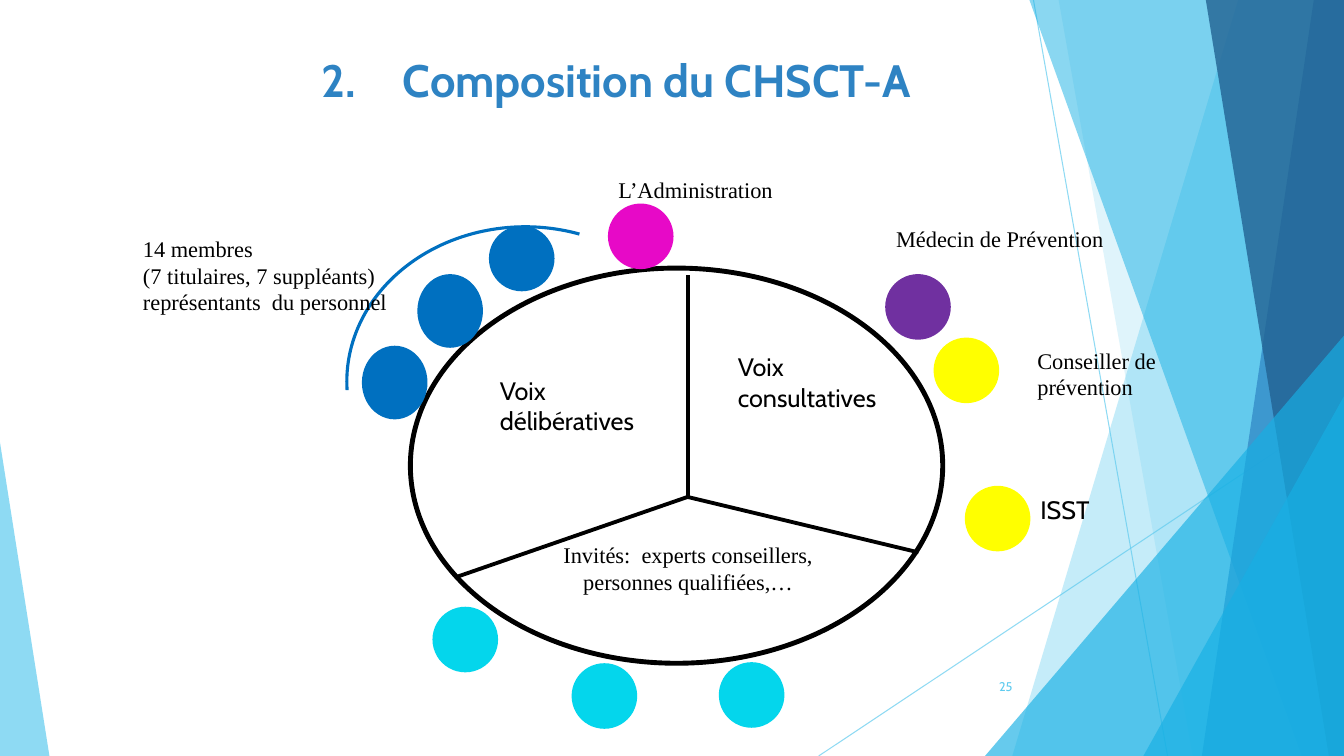
from lxml import etree
from pptx import Presentation
from pptx.dml.color import RGBColor
from pptx.enum.shapes import MSO_CONNECTOR, MSO_SHAPE
from pptx.enum.text import MSO_ANCHOR, PP_ALIGN
from pptx.oxml.ns import qn
from pptx.util import Inches, Pt

STRAIGHT = MSO_CONNECTOR.STRAIGHT
OVAL, ARC, TRIANGLE = MSO_SHAPE.OVAL, MSO_SHAPE.ARC, MSO_SHAPE.ISOSCELES_TRIANGLE
LEFT, CENTER, RIGHT = PP_ALIGN.LEFT, PP_ALIGN.CENTER, PP_ALIGN.RIGHT
TOP, MIDDLE = MSO_ANCHOR.TOP, MSO_ANCHOR.MIDDLE

BLACK = RGBColor(0x00, 0x00, 0x00)
WHITE = RGBColor(0xFF, 0xFF, 0xFF)
SKY = RGBColor(0x5F, 0xCB, 0xEF)
AZURE = RGBColor(0x17, 0xB0, 0xE4)
STEEL = RGBColor(0x2E, 0x83, 0xC3)
NAVY = RGBColor(0x22, 0x62, 0x92)
BLUE = RGBColor(0x00, 0x70, 0xC0)
YELLOW = RGBColor(0xFF, 0xFF, 0x00)
CYAN = RGBColor(0x04, 0xD6, 0xEC)
MAGENTA = RGBColor(0xE7, 0x09, 0xC7)
PURPLE = RGBColor(0x70, 0x30, 0xA0)

SANS, SERIF = "Cabin", "Times New Roman"
WIDTH, HEIGHT = 13.33, 7.5
SEAT = 0.63
HUB = (6.82, 4.93)

BACKDROP_LINES = [((10.25, 0), (11.58, HEIGHT)), ((WIDTH, 4.03), (8.12, HEIGHT))]
BACKDROP_BANDS = [
    (12.28, 10.04, SKY, 36),
    (10.5, 11.83, SKY, 20),
    (10.21, 12.91, AZURE, 50),
    (13.03, 11.92, STEEL, 70),
    (11.96, 13.18, NAVY, 80),
]
BACKDROP_TRIANGLES = [
    (9.77, 3.33, 3.56, 4.17, 1, AZURE, 66),
    (11.34, 3.93, 1.99, 3.57, 1, AZURE, 66),
    (0, 4.39, 0.49, 3.11, 0, SKY, 70),
]
SPOKE_ENDS = [(6.82, 2.73), (4.54, 5.72), (9.11, 5.48)]
SEATS = [
    (3.6, 3.44, 0.71, BLUE),
    (4.15, 2.73, 0.71, BLUE),
    (4.86, 2.25, SEAT, BLUE),
    (6.04, 2.03, SEAT, MAGENTA),
    (8.79, 2.73, SEAT, PURPLE),
    (9.27, 3.36, SEAT, YELLOW),
    (9.58, 4.83, SEAT, YELLOW),
    (4.3, 6.03, SEAT, CYAN),
    (5.68, 6.59, SEAT, CYAN),
    (7.14, 6.58, SEAT, CYAN),
]
LABELS = [
    ("Voix délibératives", 4.86, 3.67, 1.97, 0.71, SANS, 18, LEFT),
    ("Voix consultatives", 7.22, 3.44, 1.81, 0.71, SANS, 18, LEFT),
    ("ISST", 10.22, 4.86, 1.6, 0.4, SANS, 18, LEFT),
    ("Médecin de Prévention", 8.79, 2.18, 2.6, 0.37, SERIF, 16, LEFT),
    ("Conseiller de prévention", 10.19, 3.39, 1.42, 0.64, SERIF, 16, LEFT),
    ("Invités:  experts conseillers, personnes qualifiées,…",
     5.25, 5.32, 3.15, 0.64, SERIF, 16, CENTER),
    ("L’Administration", 5.56, 1.7, 2.68, 0.37, SERIF, 16, CENTER),
    ("14 membres\n(7 titulaires, 7 suppléants) représentants  du personnel",
     1.32, 2.28, 2.66, 0.91, SERIF, 16, LEFT),
]


def set_opacity(shape, percent):
    """Make every solid colour of the shape partly transparent."""
    for color in shape._element.spPr.iter(qn("a:srgbClr")):
        etree.SubElement(color, qn("a:alpha"), val=str(percent * 1000))


def paint(shape, fill, line=None, weight=1.5):
    """Give the shape its fill and outline; None leaves that part out."""
    shape.shadow.inherit = False
    if fill is None:
        shape.fill.background()
    else:
        shape.fill.solid()
        shape.fill.fore_color.rgb = fill
    if line is None:
        shape.line.fill.background()
    else:
        shape.line.color.rgb = line
        shape.line.width = Pt(weight)


def add_preset(slide, kind, left, top, width, height, fill, line=None, weight=1.5):
    """Add a painted preset shape."""
    shape = slide.shapes.add_shape(
        kind, Inches(left), Inches(top), Inches(width), Inches(height))
    paint(shape, fill, line, weight)
    return shape


def add_line(slide, start, end, color, weight):
    """Add a straight line without shadow."""
    line = slide.shapes.add_connector(STRAIGHT, *map(Inches, start + end))
    line.line.color.rgb = color
    line.line.width = Pt(weight)
    etree.SubElement(line._element.spPr, qn("a:effectLst"))
    return line


def add_band(slide, top_x, bottom_x, color, opacity):
    """Add a full-height band from a slanted edge to the right slide edge."""
    builder = slide.shapes.build_freeform(Inches(top_x), 0)
    corners = [(WIDTH, 0), (WIDTH, HEIGHT), (bottom_x, HEIGHT)]
    builder.add_line_segments([(Inches(x), Inches(y)) for x, y in corners], close=True)
    band = builder.convert_to_shape()
    paint(band, color)
    set_opacity(band, opacity)


def add_text(slide, text, left, top, width, height, font, size, alignment,
             color=BLACK, bold=False, anchor=TOP):
    """Add a wrapped text box in one style and return it."""
    box = slide.shapes.add_textbox(
        Inches(left), Inches(top), Inches(width), Inches(height))
    frame = box.text_frame
    frame.word_wrap = True
    frame.vertical_anchor = anchor
    frame.text = text
    for paragraph in frame.paragraphs:
        paragraph.alignment = alignment
        for run in paragraph.runs:
            run.font.name = font
            run.font.size = Pt(size)
            run.font.bold = bold
            run.font.color.rgb = color
    return box


def number_paragraph(paragraph, start, indent):
    """Number the paragraph from start with a hanging indent."""
    properties = paragraph._p.get_or_add_pPr()
    properties.set("marL", str(Inches(indent)))
    properties.set("indent", str(-Inches(indent)))
    etree.SubElement(properties, qn("a:buFont"), typeface="+mj-lt")
    etree.SubElement(properties, qn("a:buAutoNum"),
                     type="arabicPeriod", startAt=str(start))


def add_backdrop(slide):
    """Draw the translucent facets at the slide's sides."""
    for start, end in BACKDROP_LINES:
        set_opacity(add_line(slide, start, end, SKY, 0.75), 70)
    for band in BACKDROP_BANDS:
        add_band(slide, *band)
    for left, top, width, height, apex, color, opacity in BACKDROP_TRIANGLES:
        triangle = add_preset(slide, TRIANGLE, left, top, width, height, color)
        triangle.adjustments[0] = apex
        set_opacity(triangle, opacity)


def add_committee(slide):
    """Draw the table, its three sectors and the seats around it."""
    add_preset(slide, OVAL, 4.07, 2.66, 5.28, 3.92, WHITE, BLACK, 3.5)
    for end in SPOKE_ENDS:
        add_line(slide, HUB, end, BLACK, 2.75)
    for left, top, height, color in SEATS:
        add_preset(slide, OVAL, left, top, SEAT, height, color, color)
    arc = add_preset(slide, ARC, 3.44, 2.25, 3.54, 3.07, None, BLUE, 2.25)
    arc.adjustments[0], arc.adjustments[1] = 106.33, 174.1


def main():
    """Build and save the slide."""
    presentation = Presentation()
    presentation.slide_width = Inches(WIDTH)
    presentation.slide_height = Inches(HEIGHT)
    slide = presentation.slides.add_slide(presentation.slide_layouts[6])
    add_backdrop(slide)
    add_committee(slide)
    for label in LABELS:
        add_text(slide, *label)
    title = add_text(slide, "Composition du CHSCT-A", 1.41, 0.47, 9.4, 0.72,
                     SANS, 32.4, CENTER, STEEL, bold=True)
    number_paragraph(title.text_frame.paragraphs[0], 2, 0.81)
    add_text(slide, "25", 9.39, 6.61, 0.75, 0.4, SANS, 9, RIGHT, SKY, anchor=MIDDLE)
    presentation.save("out.pptx")


if __name__ == "__main__":
    main()
